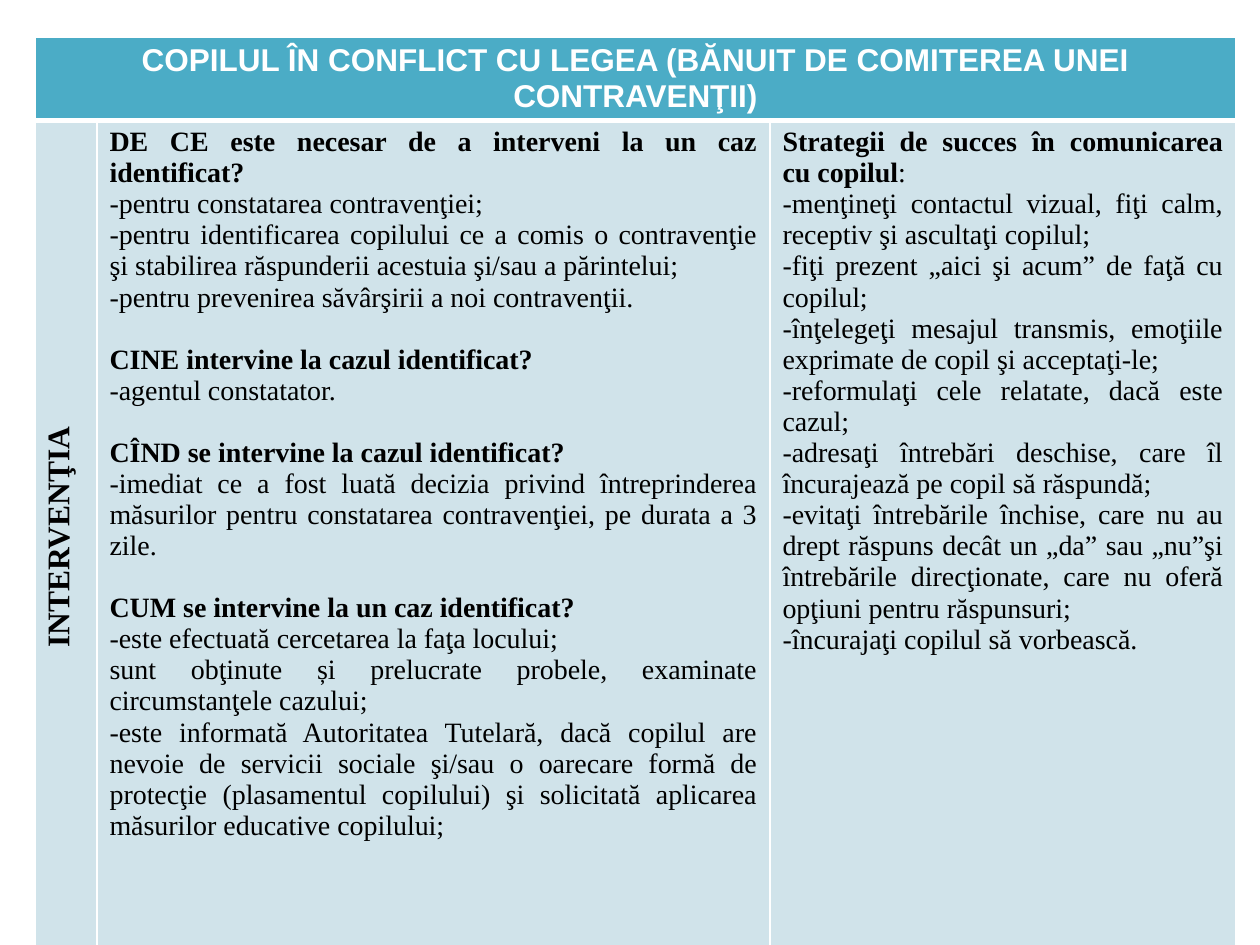
from lxml import etree
from pptx import Presentation
from pptx import util as u
from pptx.dml.color import RGBColor
from pptx.enum import text
from pptx.oxml.ns import qn

WHITE = RGBColor(0xFF, 0xFF, 0xFF)
BLACK = RGBColor(0, 0, 0)
TEAL = RGBColor(0x4B, 0xAC, 0xC6)
PALE = RGBColor(0xD0, 0xE3, 0xEA)
MID, JUST = text.PP_ALIGN.CENTER, text.PP_ALIGN.JUSTIFY
SERIF = "Times New Roman"
SCALE = 914400 / 126

HEAD = "COPILUL ÎN CONFLICT CU LEGEA (BĂNUIT DE COMITEREA UNEI CONTRAVENŢII)"
SIDE = "INTERVENŢIA"
CASE = [
    ("DE CE este necesar de a interveni la un caz identificat?", [
        "-pentru constatarea contravenţiei;",
        "-pentru identificarea copilului ce a comis o contravenţie şi stabilirea răspunderii acestuia şi/sau a părintelui;",
        "-pentru prevenirea săvârşirii a noi contravenţii."]),
    ("CINE intervine la cazul identificat?", ["-agentul constatator."]),
    ("CÎND se intervine la cazul identificat?", [
        "-imediat ce a fost luată decizia privind întreprinderea măsurilor pentru constatarea contravenţiei, pe durata a 3 zile."]),
    ("CUM se intervine la un caz identificat?", [
        "-este efectuată cercetarea la faţa locului;",
        "sunt obţinute și prelucrate probele, examinate circumstanţele cazului;",
        "-este informată Autoritatea Tutelară, dacă copilul are nevoie de servicii sociale şi/sau o oarecare formă de protecţie (plasamentul copilului) şi solicitată aplicarea măsurilor educative copilului;"]),
]
TIPS = [
    ("Strategii de succes în comunicarea cu copilul:", [
        "-menţineţi contactul vizual, fiţi calm, receptiv şi ascultaţi copilul;",
        "-fiţi prezent „aici şi acum” de faţă cu copilul;",
        "-înţelegeţi mesajul transmis, emoţiile exprimate de copil şi acceptaţi-le;",
        "-reformulaţi cele relatate, dacă este cazul;",
        "-adresaţi întrebări deschise, care îl încurajează pe copil să răspundă;",
        "-evitaţi întrebările închise, care nu au drept răspuns decât un „da” sau „nu”şi întrebările direcţionate, care nu oferă opţiuni pentru răspunsuri;",
        "-încurajaţi copilul să vorbească."]),
]


def px(n):
    return u.Emu(round(n * SCALE))


class Deck:
    """Holds the style and the current slide."""

    def __init__(self, wide, high):
        self.prs = Presentation()
        self.prs.slide_width, self.prs.slide_height = px(wide), px(high)
        self.slide = self.prs.slides.add_slide(self.prs.slide_layouts[6])

    def grid(self, left, top, cols, rows):
        box = self.slide.shapes.add_table(
            len(rows), len(cols), px(left), px(top), px(sum(cols)), px(sum(rows)))
        for col, wide in zip(box.table.columns, cols):
            col.width = px(wide)
        for row, high in zip(box.table.rows, rows):
            row.height = px(high)
        return box.table

    def cell(self, cell, fill, base=1):
        cell.fill.solid()
        cell.fill.fore_color.rgb = fill
        props = cell._tc.get_or_add_tcPr()
        for spot, side in enumerate("LRTB"):
            line = etree.Element(qn("a:ln" + side))
            line.set("w", str(int(u.Pt(base if side == "B" else 1))))
            paint = etree.SubElement(line, qn("a:solidFill"))
            etree.SubElement(paint, qn("a:srgbClr")).set("val", str(WHITE))
            props.insert(spot, line)

    def style(self, para, size, bold, align, face=SERIF, ink=BLACK):
        para.alignment = align
        for run in para.runs:
            font = run.font
            font.size, font.bold, font.name = u.Pt(size), bold, face
            font.color.rgb = ink

    def label(self, cell, words, face, ink):
        cell.text_frame.text = words
        self.style(cell.text_frame.paragraphs[0], 18, True, MID, face, ink)

    def topics(self, cell, items):
        frame = cell.text_frame
        for spot, (head, lines) in enumerate(items):
            para = frame.add_paragraph() if spot else frame.paragraphs[0]
            para.text = head.rstrip(":")
            if head.endswith(":"):
                para.add_run().text = ":"
            self.style(para, 16, True, JUST)
            for run in para.runs[1:]:
                run.font.bold = False
            if spot:
                para.space_before = u.Pt(17.7)
            for line in lines:
                para = frame.add_paragraph()
                para.text = line
                self.style(para, 16, False, JUST)


def main():
    deck = Deck(1260, 945)
    table = deck.grid(35, 37, [62, 673, 466], [49, 834])
    for col in range(3):
        deck.cell(table.cell(0, col), TEAL, 3)
        deck.cell(table.cell(1, col), PALE)
    table.cell(0, 0).merge(table.cell(0, 2))
    deck.label(table.cell(0, 0), HEAD, "Arial", WHITE)
    side = table.cell(1, 0)
    deck.label(side, SIDE, SERIF, BLACK)
    side._tc.get_or_add_tcPr().set("vert", "vert270")
    deck.topics(table.cell(1, 1), CASE)
    deck.topics(table.cell(1, 2), TIPS)
    deck.prs.save("out.pptx")


if __name__ == "__main__":
    main()
